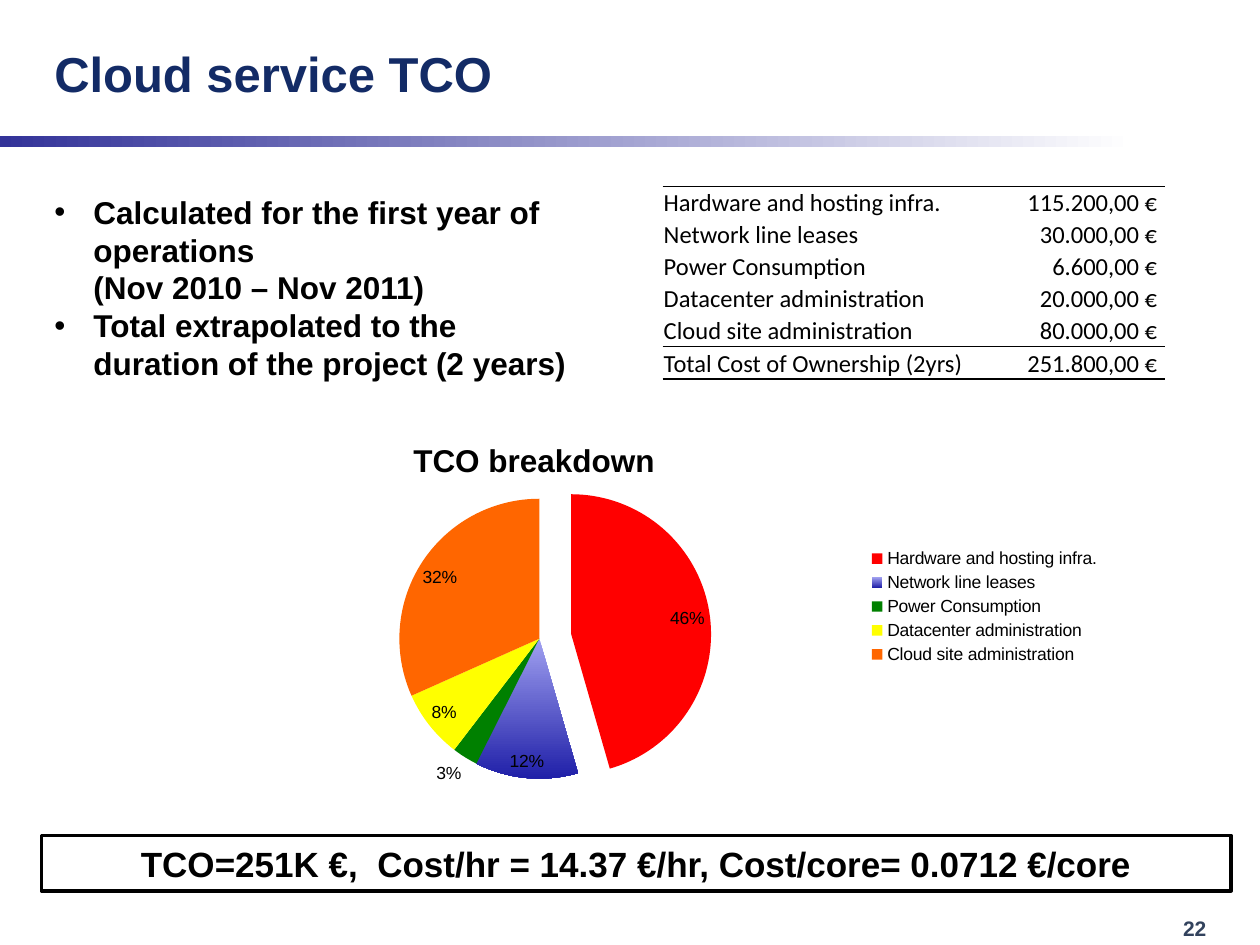
from dataclasses import dataclass

from lxml.etree import SubElement
from pptx import Presentation
from pptx.chart.data import CategoryChartData
from pptx.dml.color import RGBColor
from pptx.enum.chart import XL_CHART_TYPE, XL_LABEL_POSITION, XL_LEGEND_POSITION
from pptx.enum.shapes import MSO_SHAPE
from pptx.enum.text import MSO_ANCHOR, MSO_AUTO_SIZE, PP_ALIGN
from pptx.oxml import parse_xml
from pptx.oxml.ns import nsdecls, qn
from pptx.util import Cm, Pt

PLAIN_TABLE_STYLE = "{2D5ABB26-0587-4C30-8999-92F81FD0307C}"


@dataclass(frozen=True)
class Theme:
    face: str = "Arial"
    table_face: str = "Calibri"
    black: str = "000000"
    white: str = "FFFFFF"
    navy: str = "132B66"
    slate: str = "32425D"
    bar: str = "333399"
    slices: tuple = ("FF0000", "333399", "008000", "FFFF00", "FF6600")
    slice_gradient: tuple = ("A0A0F0", "2020A8")
    title_size: int = 28
    summary_size: int = 20
    body_size: int = 18
    table_size: int = 14
    number_size: int = 12
    chart_size: int = 10


theme = Theme()


def style(font, size, color=theme.black, bold=False, face=theme.face):
    font.name, font.size, font.bold = face, Pt(size), bold
    font.color.rgb = RGBColor.from_string(color)


def set_layout(part, **fractions):
    """Place a chart part by fractions of the chart's width and height."""
    for old in part.findall(qn("c:layout")):
        part.remove(old)
    layout = parse_xml(f"<c:layout {nsdecls('c')}><c:manualLayout/></c:layout>")
    manual = layout[0]
    if part.tag == qn("c:plotArea"):
        SubElement(manual, qn("c:layoutTarget"), val="inner")
    for axis in "xy":
        SubElement(manual, qn(f"c:{axis}Mode"), val="edge")
    for name, value in fractions.items():
        SubElement(manual, qn(f"c:{name}"), val=str(value))
    overlay = part.find(qn("c:overlay"))
    part.insert(0 if overlay is None else part.index(overlay), layout)


deck = Presentation()
deck.slide_width, deck.slide_height = Cm(25.4), Cm(19.05)
page = deck.slides.add_slide(deck.slide_layouts[1])

# Title and gradient bar
title, body = page.placeholders
title.left, title.top, title.width, title.height = Cm(0.84), Cm(0.2), Cm(17.98), Cm(2.54)
title.text_frame.text = "Cloud service TCO"
title.text_frame.vertical_anchor = MSO_ANCHOR.MIDDLE
para = title.text_frame.paragraphs[0]
para.alignment = PP_ALIGN.LEFT
style(para.font, theme.title_size, theme.navy, bold=True)

bar = page.shapes.add_shape(MSO_SHAPE.RECTANGLE, 0, Cm(2.74), deck.slide_width, Cm(0.22))
bar.shadow.inherit = False
bar.line.fill.background()
bar.fill.gradient()
bar.fill.gradient_angle = 0
for stop, color, position in zip(bar.fill.gradient_stops, (theme.bar, theme.white), (0, 0.9)):
    stop.color.rgb = RGBColor.from_string(color)
    stop.position = position

# Bullets
body.left, body.top, body.width, body.height = Cm(0.84), Cm(3.76), Cm(10.9), Cm(4.11)
body.text_frame.auto_size = MSO_AUTO_SIZE.NONE
body.text_frame.text = (
    "Calculated for the first year of operations \v(Nov 2010 – Nov 2011)\n"
    "Total extrapolated to the duration of the project (2 years)"
)
for para in body.text_frame.paragraphs:
    properties = para._p.get_or_add_pPr()
    properties.set("marL", str(Cm(0.79)))
    properties.set("indent", str(-Cm(0.79)))
    SubElement(properties, qn("a:buChar"), char="•")
    para.space_before = Pt(0)
    para.line_spacing = 1.0
    style(para.font, theme.body_size, bold=True)

# Cost table
costs = [
    ("Hardware and hosting infra.", "115.200,00 €"),
    ("Network line leases", "30.000,00 €"),
    ("Power Consumption", "6.600,00 €"),
    ("Datacenter administration", "20.000,00 €"),
    ("Cloud site administration", "80.000,00 €"),
    ("Total Cost of Ownership (2yrs)", "251.800,00 €"),
]
borders = {0: {"T": 0.5}, 4: {"B": 1}, 5: {"T": 1, "B": 1}}
table = page.shapes.add_table(
    len(costs), 2, Cm(13.36), Cm(3.76), Cm(10.12), Cm(3.88)
).table
table.first_row = table.horz_banding = False
table._tbl.tblPr.find(qn("a:tableStyleId")).text = PLAIN_TABLE_STYLE
table.columns[0].width, table.columns[1].width = Cm(6.56), Cm(3.56)
for index, entry in enumerate(costs):
    table.rows[index].height = Cm(0.64 if index < 4 else 0.66)
    for column, text in enumerate(entry):
        cell = table.cell(index, column)
        cell.text = text
        cell.fill.background()
        cell.vertical_anchor = MSO_ANCHOR.BOTTOM
        cell.margin_left = cell.margin_top = Cm(0.02)
        cell.margin_right = Cm(0.15 if column else 0.02)
        cell.margin_bottom = 0
        para = cell.text_frame.paragraphs[0]
        para.alignment = PP_ALIGN.RIGHT if column else PP_ALIGN.LEFT
        style(para.font, theme.table_size, face=theme.table_face)
        for position, (side, width) in enumerate(borders.get(index, {}).items()):
            cell._tc.get_or_add_tcPr().insert(position, parse_xml(
                f'<a:ln{side} {nsdecls("a")} w="{Pt(width)}"><a:solidFill>'
                f'<a:srgbClr val="{theme.black}"/></a:solidFill></a:ln{side}>'
            ))

# Pie chart
data = CategoryChartData()
data.categories = [name for name, cost in costs[:-1]]
data.add_series("Series 1", (46, 12, 3, 8, 32))
chart = page.shapes.add_chart(
    XL_CHART_TYPE.PIE, Cm(4.19), Cm(7.65), Cm(18.31), Cm(9.25), data
).chart
style(chart.font, theme.chart_size)
chart.has_title = True
chart.chart_title.text_frame.text = "TCO breakdown"
style(chart.chart_title.text_frame.paragraphs[0].font, theme.body_size, bold=True)
chart.has_legend = True
chart.legend.position = XL_LEGEND_POSITION.RIGHT
chart.legend.include_in_layout = False
style(chart.legend.font, theme.chart_size)

plot = chart.plots[0]
plot.vary_by_categories = True
plot.has_data_labels = True
labels = plot.data_labels
labels.show_percentage, labels.show_value = True, False
labels.number_format, labels.number_format_is_linked = "0%", False
labels.position = XL_LABEL_POSITION.BEST_FIT
style(labels.font, theme.chart_size)

points = plot.series[0].points
for index, color in enumerate(theme.slices):
    fill = points[index].format.fill
    fill.solid()
    fill.fore_color.rgb = RGBColor.from_string(color)
network_fill = points[1].format.fill
network_fill.gradient()
network_fill.gradient_angle = 270
for stop, color in zip(network_fill.gradient_stops, theme.slice_gradient):
    stop.color.rgb = RGBColor.from_string(color)
hardware = points[0].format.fill._xPr.getparent()
explosion = parse_xml(f'<c:explosion {nsdecls("c")} val="23"/>')
hardware.find(qn("c:spPr")).addprevious(explosion)

set_layout(chart.chart_title._element, x=0.22, y=0.12)
set_layout(chart.legend._element, x=0.72, y=0.36, w=0.27, h=0.27)
set_layout(chart._chartSpace.chart.plotArea, x=0.21, y=0.26, w=0.31, h=0.61)

# Summary and page number
summary = page.shapes.add_shape(MSO_SHAPE.RECTANGLE, Cm(0.84), Cm(16.84), Cm(23.98), Cm(1.12))
summary.shadow.inherit = False
summary.fill.solid()
summary.fill.fore_color.rgb = RGBColor.from_string(theme.white)
summary.line.color.rgb = RGBColor.from_string(theme.black)
summary.line.width = Pt(2)
summary.text_frame.text = "TCO=251K €,  Cost/hr = 14.37 €/hr, Cost/core= 0.0712 €/core"
para = summary.text_frame.paragraphs[0]
para.alignment = PP_ALIGN.CENTER
style(para.font, theme.summary_size, bold=True)

number = page.shapes.add_textbox(Cm(23.6), Cm(18.34), Cm(1.63), Cm(0.76))
number.text_frame.word_wrap = True
number.text_frame.text = "22"
style(number.text_frame.paragraphs[0].font, theme.number_size, theme.slate, bold=True)

deck.save("out.pptx")
